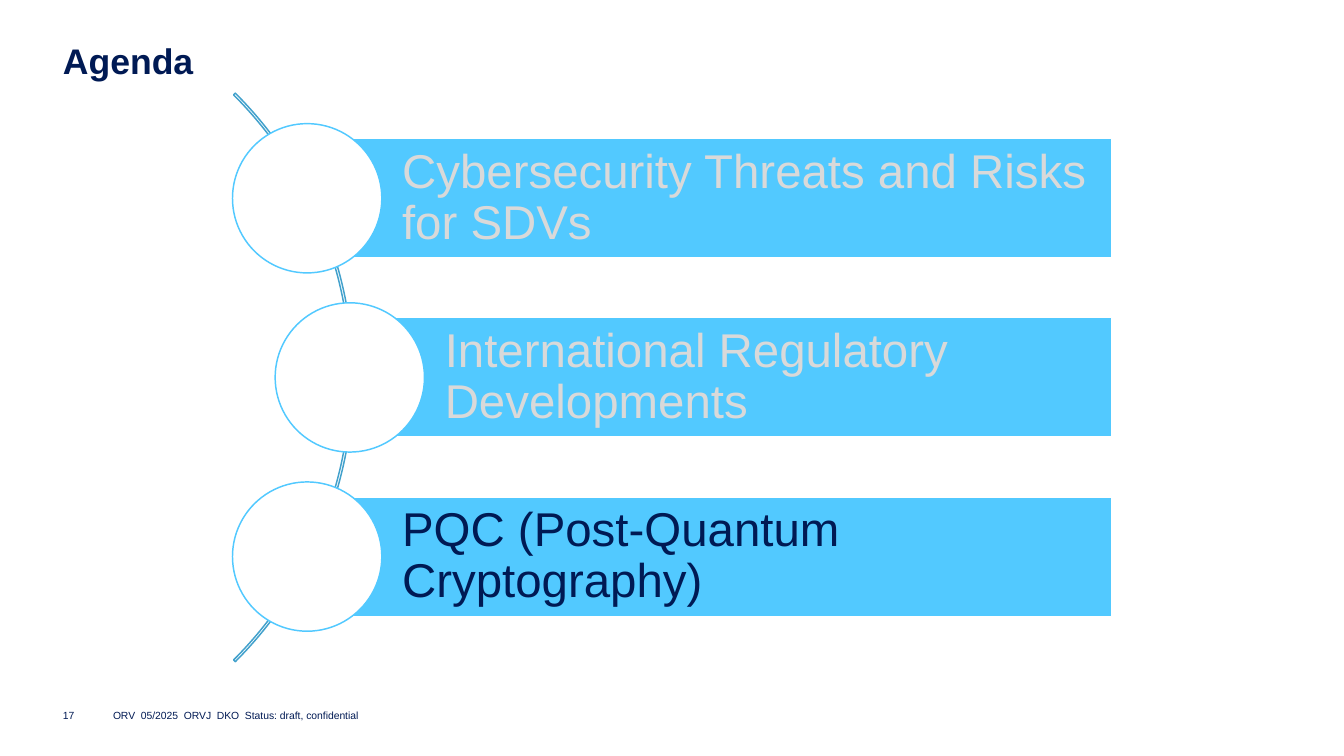
from pptx import Presentation
from pptx import util as u
from pptx.dml.color import RGBColor
from pptx.enum import shapes, text

NAVY = RGBColor(0x00, 0x1A, 0x54)
SKY = RGBColor(0x52, 0xC9, 0xFF)
ARC_BLUE = RGBColor(0x42, 0xA1, 0xCC)
GREY = RGBColor(0xD9, 0xD9, 0xD9)
WHITE = RGBColor(0xFF, 0xFF, 0xFF)

TOPICS = [
    ("Cybersecurity Threats and Risks for SDVs", 2.88, GREY),
    ("International Regulatory Developments", 3.28, GREY),
    ("PQC (Post-Quantum Cryptography)", 2.88, NAVY),
]
FIRST_MIDDLE, PITCH = 1.86, 1.68
BAND_RIGHT, BAND_HEIGHT, CIRCLE = 10.42, 1.12, 1.4
ARC_SIZE, ARC_LEFT = 7.54, -4.23


class AgendaSlide:
    """Draws agenda elements on one slide in a shared style."""

    font_name = "Arial"

    def __init__(self, presentation):
        self.slide = presentation.slides.add_slide(presentation.slide_layouts[6])

    def set_text(self, shape, words, size, color, margins=(0, 0, 0, 0), bold=False,
                 wrap=True, anchor=text.MSO_ANCHOR.MIDDLE, line_spacing=1.0):
        frame = shape.text_frame
        sides = ("margin_left", "margin_top", "margin_right", "margin_bottom")
        layout = dict(zip(sides, map(u.Inches, margins)))
        layout.update(word_wrap=wrap, vertical_anchor=anchor)
        for name, value in layout.items():
            setattr(frame, name, value)
        paragraph = frame.paragraphs[0]
        paragraph.text = words
        paragraph.alignment = text.PP_ALIGN.LEFT
        paragraph.line_spacing = line_spacing
        paragraph.font.color.rgb = color
        font_values = {"name": self.font_name, "size": u.Pt(size), "bold": bold}
        for name, value in font_values.items():
            setattr(paragraph.font, name, value)

    def label(self, words, box, size, **options):
        shape = self.slide.shapes.add_textbox(*map(u.Inches, box))
        self.set_text(shape, words, size, NAVY, **options)

    def shape(self, kind, box, line, fill=None):
        shape = self.slide.shapes.add_shape(kind, *map(u.Inches, box))
        shape.shadow.inherit = False
        if fill is None:
            shape.fill.background()
        else:
            shape.fill.solid()
            shape.fill.fore_color.rgb = fill
        shape.line.color.rgb = line
        shape.line.width = u.Pt(1)
        return shape

    def arc(self, middle):
        box = (ARC_LEFT, middle - ARC_SIZE / 2, ARC_SIZE, ARC_SIZE)
        arc = self.shape(shapes.MSO_SHAPE.BLOCK_ARC, box, ARC_BLUE)
        for index, value in enumerate((189, 27, 0.003)):
            arc.adjustments[index] = value

    def topic(self, words, left, middle, color):
        band_box = (left, middle - BAND_HEIGHT / 2, BAND_RIGHT - left, BAND_HEIGHT)
        band = self.shape(shapes.MSO_SHAPE.RECTANGLE, band_box, WHITE, SKY)
        self.set_text(band, words, 32, color, margins=(0.89, 0.09, 0.09, 0.09),
                      line_spacing=0.9)
        circle_box = (left - CIRCLE / 2, middle - CIRCLE / 2, CIRCLE, CIRCLE)
        self.shape(shapes.MSO_SHAPE.OVAL, circle_box, SKY, WHITE)


def main():
    presentation = Presentation()
    presentation.slide_width = u.Inches(12.6)
    presentation.slide_height = u.Inches(7.09)
    agenda = AgendaSlide(presentation)
    agenda.label("Agenda", (0.59, 0.39, 11.42, 0.4), 24, bold=True,
                 anchor=text.MSO_ANCHOR.TOP, line_spacing=0.97)
    agenda.arc(FIRST_MIDDLE + PITCH)
    for index, (words, left, color) in enumerate(TOPICS):
        agenda.topic(words, left, FIRST_MIDDLE + index * PITCH, color)
    agenda.label("17", (0.59, 6.61, 0.39, 0.2), 7, wrap=False)
    agenda.label("ORV  05/2025  ORVJ  DKO  Status: draft, confidential",
                 (1.06, 6.61, 5.04, 0.2), 7, wrap=False)
    presentation.save("out.pptx")


if __name__ == "__main__":
    main()
